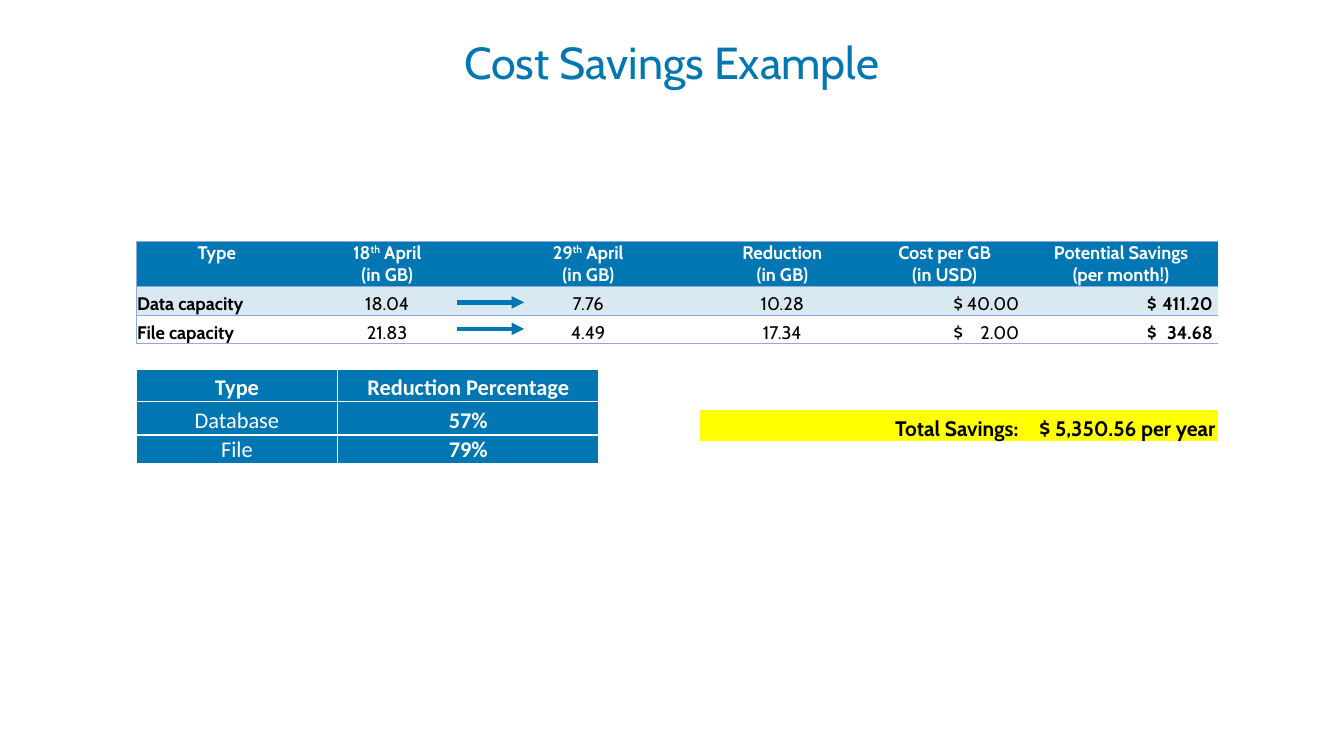
from dataclasses import dataclass

from lxml.etree import SubElement
from pptx import Presentation
from pptx.dml.color import RGBColor as Rgb
from pptx.enum.shapes import MSO_CONNECTOR as Connector
from pptx.enum.text import MSO_ANCHOR as Anchor, PP_ALIGN as Align
from pptx.oxml.ns import qn
from pptx.util import Inches, Pt

SLIDE_W, SLIDE_H = Inches(13.33), Inches(7.5)
PLAIN_TABLE = "{2D5ABB26-0587-4C30-8999-92F81FD0307C}"


@dataclass(frozen=True)
class Theme:
    """Colours, fonts and type sizes of the slide."""
    blue: str = "0077B3"
    pale: str = "D9E9F2"
    rule: str = "8EA9DB"
    yellow: str = "FFFF00"
    white: str = "FFFFFF"
    black: str = "000000"
    brand: str = "Cabin"
    plain: str = "Calibri"
    title: float = 32
    cost: float = 13
    total: float = 15
    percent: float = 16
    spacer: float = 8


THEME = Theme()
LEFT = 10.13
COST_TOP, PERCENT_TOP = 31.87, 48.8
COST_COLUMNS = [12, 13.35, 16.58, 12.3, 11.85, 14.4]
COST_ROWS = [6, 3.8, 3.8, 8.8, 4.13, 2.73]
PERCENT_COLUMNS = [15, 19.43]
PERCENT_ROWS = [4.35, 4.4, 3.8]
ARROW_LEFT, ARROW_RIGHT, ARROW_TOP, ARROW_STEP = 33.98, 39, 40, 3.5
MONEY_TAB = 4.88
MONEY_INDENTS = {4: 6.6, 5: 9.15}
TOTAL_INDENT, TOTAL_TAB = 14.55, 10.73

COSTS = [
    ["Type", "18^th^ April\n(in GB)", "29^th^ April\n(in GB)",
     "Reduction\n(in GB)", "Cost per GB\n(in USD)", "Potential Savings\n(per month!)"],
    ["Data capacity", "18.04", "7.76", "10.28", "$\t40.00", "$\t411.20"],
    ["File capacity", "21.83", "4.49", "17.34", "$\t2.00", "$\t34.68"],
    [""] * 6,
    ["", "", "", "Total Savings:\t$ 5,350.56 per year", "", ""],
    [""] * 6,
]
PERCENTS = [["Type", "Reduction Percentage"], ["Database", "57%"], ["File", "79%"]]


def across(share):
    """Turn hundredths of the slide width into a length."""
    return int(SLIDE_W * share / 100)


def down(share):
    """Turn hundredths of the slide height into a length."""
    return int(SLIDE_H * share / 100)


def apply(target, formats):
    """Set each named attribute on the target."""
    for name, value in formats.items():
        setattr(target, name, value)


def write(frame, text, color, align=Align.CENTER, tab=None, **font):
    """Write lines of text, with ^marked^ parts raised and an optional tab stop."""
    for number, line in enumerate(text.split("\n")):
        paragraph = frame.add_paragraph() if number else frame.paragraphs[0]
        paragraph.alignment = align
        if tab:
            stops = SubElement(paragraph._p.get_or_add_pPr(), qn("a:tabLst"))
            position, kind = tab
            SubElement(stops, qn("a:tab"), pos=str(across(position)), algn=kind)
        for index, part in enumerate(line.split("^")):
            run = paragraph.add_run()
            run.text = part
            apply(run.font, font)
            run.font.color.rgb = Rgb.from_string(color)
            if index % 2:
                run.font._element.set("baseline", "30000")


def add_title(slide, text):
    """Add the centred slide title."""
    box = slide.shapes.add_textbox(across(4.05), down(4.8), across(91.9), down(8))
    box.text_frame.word_wrap = True
    write(box.text_frame, text, THEME.blue, name=THEME.brand, size=Pt(THEME.title))
    box.text_frame.paragraphs[0].line_spacing = 0.9


def add_grid(slide, top, columns, rows):
    """Add an unstyled table with the given column and row shares."""
    frame = slide.shapes.add_table(
        len(rows), len(columns), across(LEFT), down(top),
        across(sum(columns)), down(sum(rows)))
    grid = frame.table
    apply(grid, {"first_row": False, "horz_banding": False})
    grid._tbl.tblPr.find(qn("a:tableStyleId")).text = PLAIN_TABLE
    for column, share in zip(grid.columns, columns):
        column.width = across(share)
    for row, share in zip(grid.rows, rows):
        row.height = down(share)
    return grid


def dress(cell, fill=None, sides="", rule=None, width=1, indent=None, anchor=Anchor.BOTTOM):
    """Set a cell's margins, borders and fill."""
    edge = Inches(0.01)
    apply(cell, {
        "margin_left": edge if indent is None else across(indent),
        "margin_right": edge if indent is None else 0,
        "margin_top": edge, "margin_bottom": 0, "vertical_anchor": anchor})
    for side in sides:
        line = SubElement(cell._tc.get_or_add_tcPr(), qn(f"a:ln{side}"), w=str(Pt(width)))
        SubElement(SubElement(line, qn("a:solidFill")), qn("a:srgbClr"), val=rule)
    if fill:
        cell.fill.solid()
        cell.fill.fore_color.rgb = Rgb.from_string(fill)
    else:
        cell.fill.background()


def cost_format(row, column):
    """Give the cell and text formats for a place in the cost table."""
    look = {"rule": THEME.rule, "width": 0.5}
    text = {"color": THEME.black, "name": THEME.brand, "size": Pt(THEME.cost),
            "bold": row == 0 or column in (0, 5)}
    if row < 3:
        look.update(sides="TB" if column else "LTB",
                    fill=(THEME.blue, THEME.pale, None)[row])
    if row == 0:
        text["color"] = THEME.white
        look["anchor"] = Anchor.TOP
    elif row < 3 and column in MONEY_INDENTS:
        look["indent"] = MONEY_INDENTS[column]
        text.update(align=Align.LEFT, tab=(MONEY_TAB, "r"))
    elif column == 0:
        text["align"] = Align.LEFT
    elif (row, column) == (4, 3):
        look.update(fill=THEME.yellow, indent=TOTAL_INDENT)
        text.update(align=Align.LEFT, tab=(TOTAL_TAB, "l"), size=Pt(THEME.total), bold=True)
    return look, text


def add_costs(slide):
    """Add the cost table with its total line."""
    grid = add_grid(slide, COST_TOP, COST_COLUMNS, COST_ROWS)
    grid.cell(4, 3).merge(grid.cell(4, 5))
    for row, entries in enumerate(COSTS):
        for column, entry in enumerate(entries):
            cell = grid.cell(row, column)
            look, text = cost_format(row, column)
            dress(cell, **look)
            if entry:
                write(cell.text_frame, entry, **text)
            else:
                SubElement(cell.text_frame.paragraphs[0]._p, qn("a:endParaRPr"),
                           sz=str(int(THEME.spacer * 100)))


def add_percents(slide):
    """Add the reduction percentage table."""
    grid = add_grid(slide, PERCENT_TOP, PERCENT_COLUMNS, PERCENT_ROWS)
    for row, entries in enumerate(PERCENTS):
        for column, entry in enumerate(entries):
            cell = grid.cell(row, column)
            dress(cell, THEME.blue, "LRTB", THEME.white)
            write(cell.text_frame, entry, THEME.white, name=THEME.plain,
                  size=Pt(THEME.percent), bold=row == 0 or column == 1)


def add_arrow(slide, top):
    """Add an arrow from the first date to the second."""
    arrow = slide.shapes.add_connector(
        Connector.STRAIGHT, across(ARROW_LEFT), down(top), across(ARROW_RIGHT), down(top))
    arrow.line.width = Pt(3)
    arrow.line.color.rgb = Rgb.from_string(THEME.blue)
    SubElement(arrow.line._get_or_add_ln(), qn("a:tailEnd"), type="triangle")
    SubElement(arrow._element.spPr, qn("a:effectLst"))


def main():
    """Build and save the slide."""
    deck = Presentation()
    apply(deck, {"slide_width": SLIDE_W, "slide_height": SLIDE_H})
    slide = deck.slides.add_slide(deck.slide_layouts[6])
    add_title(slide, "Cost Savings Example")
    add_costs(slide)
    add_percents(slide)
    for step in range(2):
        add_arrow(slide, ARROW_TOP + step * ARROW_STEP)
    deck.save("out.pptx")


if __name__ == "__main__":
    main()
